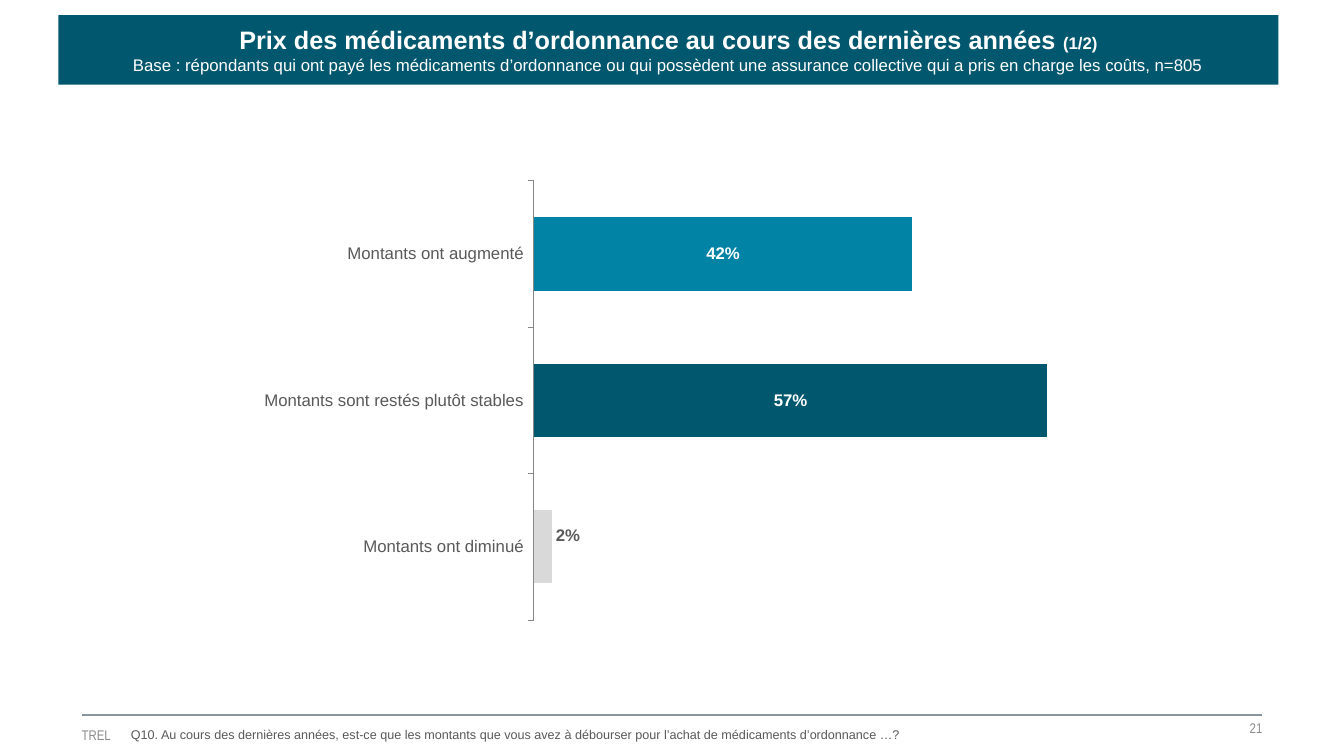
import pptx
import pptx.util
import pptx.oxml
import pptx.dml.color
import pptx.chart.data
import pptx.enum.chart
import pptx.enum.shapes
import pptx.enum.text

Inches, Pt = pptx.util.Inches, pptx.util.Pt
RGB = pptx.dml.color.RGBColor.from_string
XL = pptx.enum.chart
ALIGN = pptx.enum.text.PP_ALIGN
ANCHOR = pptx.enum.text.MSO_ANCHOR

# Content
TITLE = "Prix des médicaments d’ordonnance au cours des dernières années "
PART = "(1/2)"
BASE = ("Base : répondants qui ont payé les médicaments d’ordonnance ou qui possèdent "
        "une assurance collective qui a pris en charge les coûts, n=805")
QUESTION = ("Q10. Au cours des dernières années, est-ce que les montants que vous avez "
            "à débourser pour l’achat de médicaments d’ordonnance …?")
FIRM, PAGE = "TREL", "21"
ANSWERS = [  # answer, share, bar colour
    ("Montants ont augmenté", 0.42, "blue"),
    ("Montants sont restés plutôt stables", 0.57, "teal"),
    ("Montants ont diminué", 0.02, "pale"),
]

THEME = {
    "teal": "00576E", "blue": "0083A5", "pale": "D9D9D9", "white": "FFFFFF",
    "text": "595959", "muted": "8C8C8C", "rule": "88959E", "axis": "868686",
    "font": "Arial", "narrow": "Arial Narrow",
    "title": 18, "body": 12, "footer": 10, "question": 9,
}


def style(font, size, color, name="font", bold=False):
    values = {"size": Pt(THEME[size]), "name": THEME[name], "bold": bold}
    for key, value in values.items():
        setattr(font, key, value)
    font.color.rgb = RGB(THEME[color])


def add_run(p, text, *look, **options):
    r = p.add_run()
    r.text = text
    style(r.font, *look, **options)


def clear_margins(tf):
    for side in ("left", "top", "right", "bottom"):
        setattr(tf, f"margin_{side}", 0)
    tf.vertical_anchor = ANCHOR.MIDDLE


def add_layout(parent, index, **values):
    layout = pptx.oxml.parse_xml(
        '<c:layout xmlns:c="http://schemas.openxmlformats.org/drawingml/2006/chart">'
        "<c:manualLayout>"
        + "".join(f'<c:{tag} val="{value}"/>' for tag, value in values.items())
        + "</c:manualLayout></c:layout>")
    for old in parent.xpath("c:layout"):
        parent.remove(old)
    parent.insert(index, layout)


prs = pptx.Presentation()
prs.slide_width, prs.slide_height = Inches(13.33), Inches(7.5)
s = prs.slides.add_slide(prs.slide_layouts[6])

# Footer rule
rule = s.shapes.add_connector(pptx.enum.shapes.MSO_CONNECTOR.STRAIGHT,
                              Inches(0.81), Inches(7.09), Inches(12.52), Inches(7.09))
rule.line.color.rgb = RGB(THEME["rule"])
rule.line.width = Pt(1.5)
rule._element.spPr.append(pptx.oxml.parse_xml(
    '<a:effectLst xmlns:a="http://schemas.openxmlformats.org/drawingml/2006/main"/>'))

# Footer texts
for text, box, align, look, flush in [
    (PAGE, (8.73, 7.09, 3.79, 0.26), ALIGN.RIGHT, ("footer", "muted", "narrow"), True),
    (FIRM, (0.81, 7.16, 3.73, 0.26), ALIGN.LEFT, ("footer", "muted", "narrow"), True),
    (QUESTION, (1.2, 7.16, 11.3, 0.25), ALIGN.LEFT, ("question", "text"), False),
]:
    tf = s.shapes.add_textbox(*map(Inches, box)).text_frame
    tf.word_wrap = True
    if flush:
        clear_margins(tf)
    p = tf.paragraphs[0]
    p.alignment = align
    add_run(p, text, *look)

# Bar chart
data = pptx.chart.data.CategoryChartData(number_format="0%")
data.categories = [answer for answer, _, _ in ANSWERS]
data.add_series("Series 1", [share for _, share, _ in ANSWERS])
chart = s.shapes.add_chart(XL.XL_CHART_TYPE.BAR_CLUSTERED, Inches(1.9), Inches(1.66),
                           Inches(9.73), Inches(4.8), data).chart
chart.has_title = chart.has_legend = False
style(chart.font, "body", "text")
add_layout(chart._chartSpace.xpath("c:chart/c:plotArea")[0], 0, layoutTarget="inner",
           xMode="edge", yMode="edge", x=0.349, y=0.028, w=0.551, h=0.908)

axis = chart.category_axis
axis.reverse_order = True
axis.has_major_gridlines = False
axis.major_tick_mark = XL.XL_TICK_MARK.OUTSIDE
axis.format.line.color.rgb = RGB(THEME["axis"])
style(axis.tick_labels.font, "body", "text")
for key, value in {"visible": False, "has_major_gridlines": False,
                   "minimum_scale": 0, "maximum_scale": 0.6}.items():
    setattr(chart.value_axis, key, value)

plot = chart.plots[0]
plot.gap_width = 100
plot.vary_by_categories = False
bars = plot.series[0]
bars.format.fill.solid()
bars.format.fill.fore_color.rgb = RGB(THEME["teal"])
for i, (_, _, color) in enumerate(ANSWERS):
    fill = bars.points[i].format.fill
    fill.solid()
    fill.fore_color.rgb = RGB(THEME[color])

# Value labels: centred in the bars, outside the shortest one
labels = bars.data_labels
for key, value in {"show_value": True, "number_format": "0%",
                   "number_format_is_linked": False,
                   "position": XL.XL_LABEL_POSITION.CENTER}.items():
    setattr(labels, key, value)
style(labels.font, "body", "white", bold=True)
small = bars.points[len(ANSWERS) - 1].data_label
style(small.font, "body", "text", bold=True)
small.position = XL.XL_LABEL_POSITION.OUTSIDE_END
add_layout(chart._chartSpace.xpath(".//c:dLbl")[0], 1, x=0, y=-0.023)

# Title band
band = s.shapes.add_shape(pptx.enum.shapes.MSO_SHAPE.RECTANGLE,
                          Inches(0.58), Inches(0.15), Inches(12.1), Inches(0.69))
band.shadow.inherit = False
band.fill.solid()
band.fill.fore_color.rgb = RGB(THEME["teal"])
band.line.fill.background()
tf = band.text_frame
tf.word_wrap = True
clear_margins(tf)
heading, subtitle = tf.paragraphs[0], tf.add_paragraph()
heading.alignment = subtitle.alignment = ALIGN.CENTER
add_run(heading, TITLE, "title", "white", bold=True)
add_run(heading, PART, "body", "white", bold=True)
add_run(subtitle, BASE, "body", "white")

prs.save("out.pptx")
